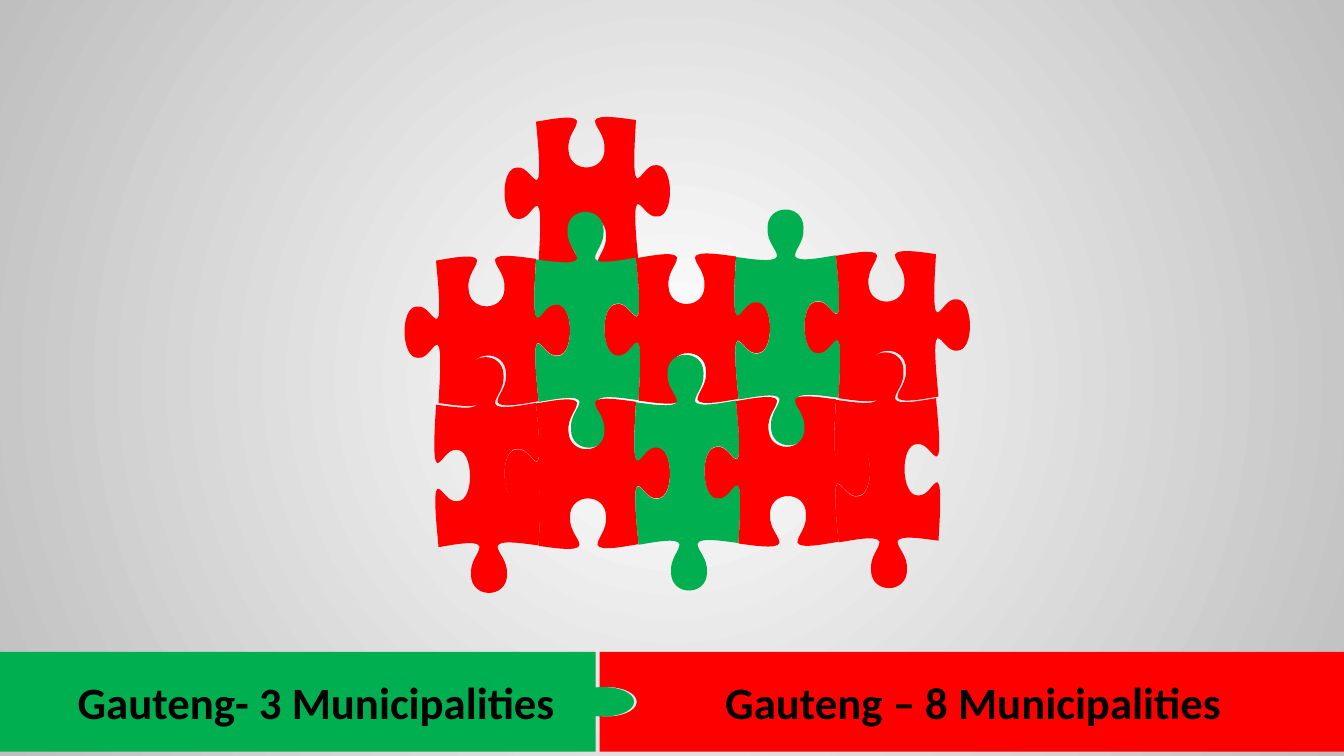
from lxml.etree import SubElement
from pptx import Presentation
from pptx.dml.color import RGBColor
from pptx.enum.text import MSO_ANCHOR, PP_ALIGN
from pptx.oxml.ns import qn
from pptx.util import Cm, Pt

RED = RGBColor(0xFF, 0x00, 0x00)
GREEN = RGBColor(0x00, 0xB0, 0x50)
BLACK = RGBColor(0x00, 0x00, 0x00)
WHITE = RGBColor(0xFF, 0xFF, 0xFF)
GREY = RGBColor(0xBF, 0xBF, 0xBF)

COLORS = {"R": RED, "G": GREEN}
ROWS = [" R   ", "RGRGR", "RRGRR"]
ROW_MIDS = [4.87, 8.34, 11.97]
FIRST_MID = 12.28
PITCH = 2.52
RISE = 0.03
SHORT, LONG = 2.52, 3.59
TILT = -1

CORNER = (0, 0)
BOW = [(0.11, -0.01), (0.39, -0.05), (0.41, 0)]
NECK = [(0.41, 0.05), (0.31, 0.1), (0.32, 0.2)]
CAP = (0.32, 0.37)
TAB, SOCKET = 1, -1
SIDES = [SOCKET, TAB, SOCKET, TAB]

BAR_TOP, BAR_HIGH = 16.43, 2.51


def bend(shape):
    """Turn each three straight segments into one cubic curve."""
    trail = shape.element.xpath(".//a:path")[0]
    close = trail.find(qn("a:close"))
    lines = trail.findall(qn("a:lnTo"))
    for i in range(0, len(lines), 3):
        curve = SubElement(trail, qn("a:cubicBezTo"))
        for line in lines[i:i + 3]:
            curve.append(line[0])
            trail.remove(line)
    trail.append(close)


def draw(slide, points, color):
    """Add a filled outline from a start point and its curves, in cm."""
    spots = [(Cm(x), Cm(y)) for x, y in points]
    pen = slide.shapes.build_freeform(*spots[0], scale=1.0)
    pen.add_line_segments(spots[1:], close=True)
    shape = pen.convert_to_shape()
    bend(shape)
    shape.shadow.inherit = False
    shape.fill.solid()
    shape.fill.fore_color.rgb = color
    shape.line.fill.background()
    return shape


def jigsaw():
    """Return a piece of side one around the origin, edge by edge."""
    half = [CORNER, *BOW, *NECK, CAP]
    edge = half + [(1 - along, out) for along, out in reversed(half)]
    points = []
    for turns, sign in enumerate(SIDES):
        side = [(along - 0.5, -0.5 - sign * out) for along, out in edge]
        for _ in range(turns):
            side = [(-y, x) for x, y in side]
        points += side[1:] if points else side
    return points


def add_piece(slide, mid_x, mid_y, color, upright):
    """Stretch a piece around its centre; an upright one is on its side."""
    wide, high = (LONG, SHORT) if upright else (SHORT, LONG)
    points = [(mid_x + x * wide, mid_y + y * high) for x, y in jigsaw()]
    shape = draw(slide, points, color)
    shape.rotation = (270 if upright else 360) + TILT


def add_puzzle(slide, left, mids):
    """Lay out the pieces; upright ones alternate like a chessboard."""
    for row, (letters, mid) in enumerate(zip(ROWS, mids)):
        for col, letter in enumerate(letters):
            if letter in COLORS:
                upright = (row + col) % 2 == 0
                add_piece(slide, left + col * PITCH, mid - col * RISE,
                          COLORS[letter], upright)


def add_banner(slide, seam, far, reach, color, text):
    """Add a labelled bar from its far end to a seam with a round notch."""
    top, base = BAR_TOP, BAR_TOP + BAR_HIGH
    mid, half = (top + base) / 2, 0.36
    tip = seam + reach
    arc = [(seam + reach / 2, mid - 1.16 * half), (tip, mid - 0.7 * half)]
    back = [(x, 2 * mid - y) for x, y in reversed(arc)]
    points = [(seam, top)]
    points += [(seam, mid - half)] * 3
    points += [*arc, (tip, mid), *back, (seam, mid + half)]
    for corner in [(seam, base), (far, base), (far, top), (seam, top)]:
        points += [corner] * 3
    label(draw(slide, points, color), text)


def label(shape, text):
    """Centre bold black text in a shape."""
    frame = shape.text_frame
    frame.text = text
    frame.word_wrap = True
    frame.vertical_anchor = MSO_ANCHOR.MIDDLE
    para = frame.paragraphs[0]
    para.alignment = PP_ALIGN.CENTER
    font = para.runs[0].font
    font.name, font.size, font.bold = "Calibri", Pt(32), True
    font.color.rgb = BLACK


def paint(slide):
    """Give the slide a round gradient from white to grey."""
    fill = slide.background.fill
    fill.gradient()
    for stop, color in zip(fill.gradient_stops, (WHITE, GREY)):
        stop.color.rgb = color
    grad = slide.element.xpath(".//p:bgPr/a:gradFill")[0]
    grad.remove(grad.find(qn("a:lin")))
    ring = SubElement(grad, qn("a:path"), {"path": "circle"})
    SubElement(ring, qn("a:fillToRect"), dict.fromkeys("ltrb", "50000"))


def main():
    """Build and save the slide."""
    deck = Presentation()
    deck.slide_width, deck.slide_height = Cm(33.87), Cm(19.05)
    slide = deck.slides.add_slide(deck.slide_layouts[6])
    paint(slide)
    add_banner(slide, 15.11, 33.95, 0.94, RED, "Gauteng – 8 Municipalities")
    add_banner(slide, 15.01, -0.03, 0.97, GREEN, "Gauteng- 3 Municipalities")
    add_puzzle(slide, FIRST_MID, ROW_MIDS)
    deck.save("out.pptx")


if __name__ == "__main__":
    main()
